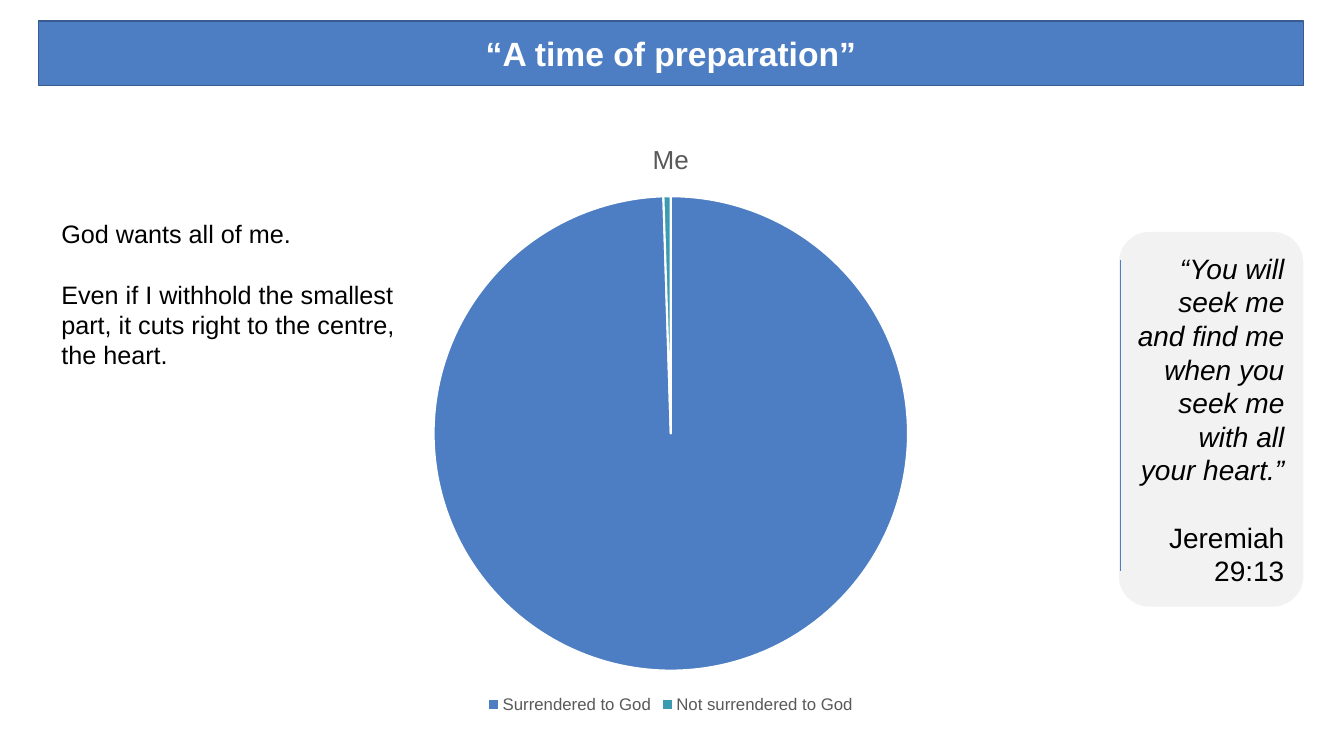
from lxml import etree
from pptx import Presentation
from pptx.chart.data import CategoryChartData
from pptx.dml.color import RGBColor
from pptx.enum.chart import XL_CHART_TYPE as CT, XL_LEGEND_POSITION as LP
from pptx.enum.shapes import MSO_CONNECTOR as MC, MSO_SHAPE as MS
from pptx.enum.text import MSO_ANCHOR as MA, MSO_AUTO_SIZE as AS, PP_ALIGN as PA
from pptx.oxml.ns import qn
from pptx.util import Pt

BLUE = RGBColor(0x4D, 0x7D, 0xC3)
NAVY = RGBColor(0x39, 0x5C, 0x90)
TEAL = RGBColor(0x3B, 0x9C, 0xB1)
PALE = RGBColor(0xF2, 0xF2, 0xF2)
GREY = RGBColor(0x59, 0x59, 0x59)
WHITE = RGBColor(0xFF, 0xFF, 0xFF)
BLACK = RGBColor(0, 0, 0)
FONT = "Arial"

TITLE = "“A time of preparation”"
MESSAGE = [
    "God wants all of me.",
    "Even if I withhold the smallest part, it cuts right to the centre, the heart.",
]
QUOTE = "“You will seek me and find me when you seek me with all your heart.”"
REFERENCE = "Jeremiah 29:13"
CHART_TITLE = "Me"
SLICES = [("Surrendered to God", 100, BLUE), ("Not surrendered to God", 0.5, TEAL)]

TITLE_BOX = (27.4, 15.1, 903.6, 46.1)
CHART_BOX = (159.1, 85.7, 640.1, 427)
QUOTE_BOX = (799.2, 165.6, 131.8, 267.8)
MESSAGE_BOX = (36.7, 152.6, 257.8, 116.6)
RULE = (800.6, 185.8, 800.6, 408.2)


def pts(values):
    return [Pt(v) for v in values]


def style(font, size, color, bold=False, italic=False):
    font.name, font.size = FONT, Pt(size)
    font.bold, font.italic = bold, italic
    font.color.rgb = color


def write(tf, text, size=18, color=BLACK, bold=False, italic=False,
          align=PA.LEFT, before=0, first=True):
    p = tf.paragraphs[0] if first else tf.add_paragraph()
    p.alignment, p.space_before = align, Pt(before)
    r = p.add_run()
    r.text = text
    style(r.font, size, color, bold, italic)


prs = Presentation()
prs.slide_width, prs.slide_height = Pt(960), Pt(540)
s = prs.slides.add_slide(prs.slide_layouts[5])

title = s.shapes.title
title.left, title.top, title.width, title.height = pts(TITLE_BOX)
geom = etree.SubElement(title._element.spPr, qn("a:prstGeom"), prst="roundRect")
etree.SubElement(geom, qn("a:avLst"))
title.fill.solid()
title.fill.fore_color.rgb = BLUE
title.line.color.rgb = NAVY
title.line.width = Pt(1)
tf = title.text_frame
tf.auto_size, tf.vertical_anchor = AS.NONE, MA.MIDDLE
write(tf, TITLE, size=24, color=WHITE, bold=True, align=PA.CENTER)

data = CategoryChartData()
data.categories = [name for name, _, _ in SLICES]
data.add_series("Series 1", [value for _, value, _ in SLICES])
chart = s.shapes.add_chart(CT.PIE, *pts(CHART_BOX), data).chart
style(chart.font, 10, BLACK)
chart.has_title = True
write(chart.chart_title.text_frame, CHART_TITLE, size=18.6, color=GREY, align=PA.CENTER)
chart.chart_title.include_in_layout = False
chart.has_legend = True
chart.legend.position = LP.BOTTOM
chart.legend.include_in_layout = False
style(chart.legend.font, 12, GREY)
plot = chart.plots[0]
plot.vary_by_categories = True
for i, (_, _, color) in enumerate(SLICES):
    fmt = plot.series[0].points[i].format
    fmt.fill.solid()
    fmt.fill.fore_color.rgb = color
    fmt.line.color.rgb = WHITE
    fmt.line.width = Pt(1.5)

quote = s.shapes.add_shape(MS.ROUNDED_RECTANGLE, *pts(QUOTE_BOX))
quote.shadow.inherit = False
quote.fill.solid()
quote.fill.fore_color.rgb = PALE
quote.line.fill.background()
tf = quote.text_frame
tf.word_wrap, tf.vertical_anchor = True, MA.MIDDLE
write(tf, QUOTE, size=20, italic=True, align=PA.RIGHT)
write(tf, REFERENCE, size=20, align=PA.RIGHT, before=24, first=False)

rule = s.shapes.add_connector(MC.STRAIGHT, *pts(RULE))
rule.line.color.rgb = BLUE
rule.line.width = Pt(0.5)
etree.SubElement(rule._element.spPr, qn("a:effectLst"))

tf = s.shapes.add_textbox(*pts(MESSAGE_BOX)).text_frame
tf.word_wrap, tf.auto_size = True, AS.SHAPE_TO_FIT_TEXT
for i, text in enumerate(MESSAGE):
    write(tf, text, before=21.6 * i, first=i == 0)

prs.save("out.pptx")
